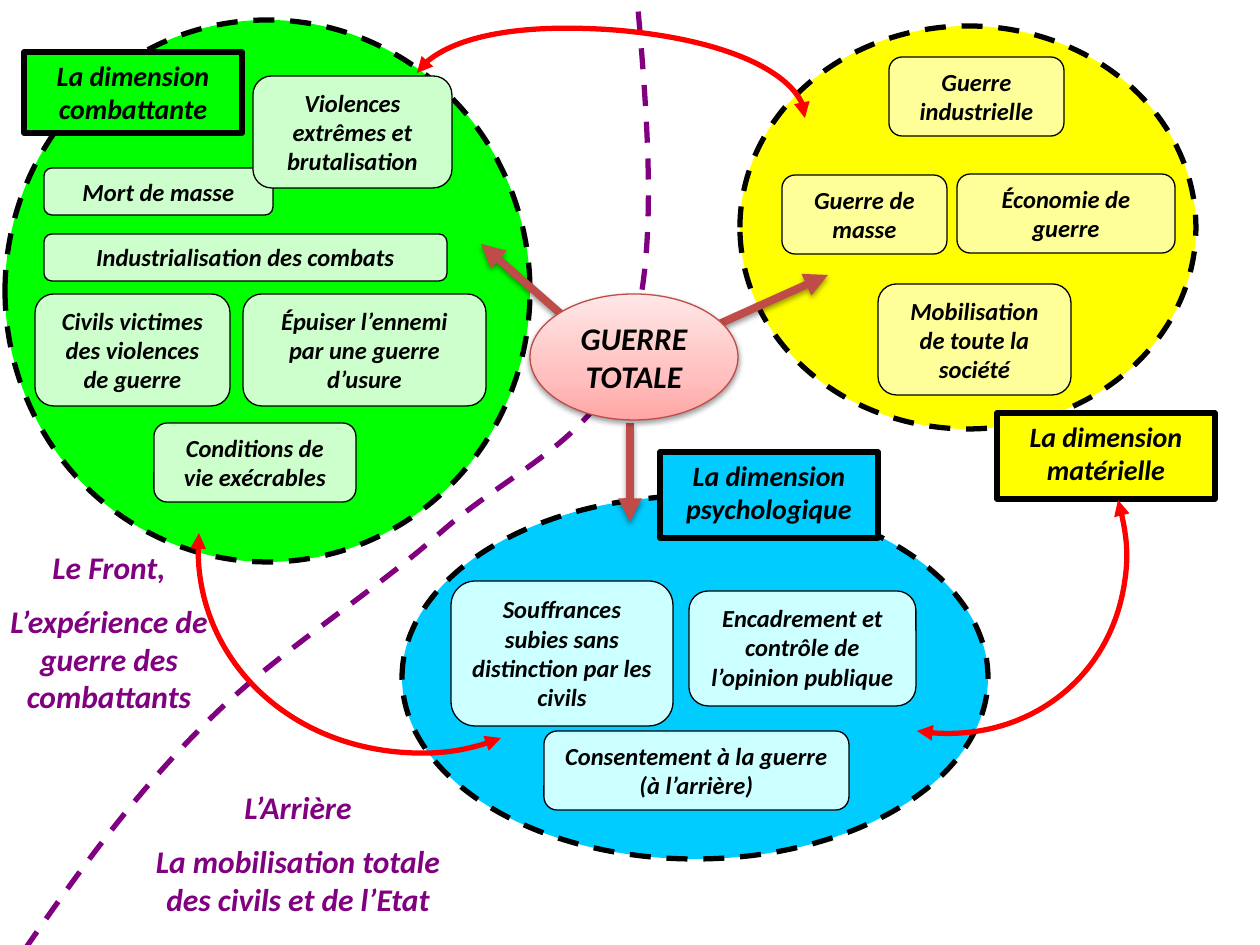
from lxml import etree
from pptx import Presentation
from pptx.dml.color import RGBColor
from pptx.enum.dml import MSO_LINE
from pptx.enum.shapes import MSO_CONNECTOR, MSO_SHAPE
from pptx.enum.text import MSO_ANCHOR, MSO_AUTO_SIZE, PP_ALIGN
from pptx.oxml import parse_xml
from pptx.oxml.ns import nsdecls, qn
from pptx.util import Emu, Pt

EMU_PER_PX = 914400 / 126

BLACK = RGBColor(0x00, 0x00, 0x00)
PURPLE = RGBColor(0x80, 0x00, 0x80)
RED = RGBColor(0xFF, 0x00, 0x00)
BRICK = RGBColor(0xBF, 0x4C, 0x48)
YELLOW = RGBColor(0xFF, 0xFF, 0x00)
PALE_YELLOW = RGBColor(0xFF, 0xFF, 0x99)
BLUE = RGBColor(0x00, 0xCC, 0xFF)
PALE_BLUE = RGBColor(0xCC, 0xFF, 0xFF)
GREEN = RGBColor(0x00, 0xFF, 0x00)
PALE_GREEN = RGBColor(0xCC, 0xFF, 0xCC)
PINK_STOPS = [(0, RGBColor(0xFF, 0xA6, 0xA5)), (35, RGBColor(0xFF, 0xC0, 0xBF)),
              (100, RGBColor(0xFF, 0xE7, 0xE7))]

# Each dimension: bubble box, bubble colour, title, title box, theme colour, themes
DIMENSIONS = [
    ((740, 26, 456, 403), YELLOW, "La dimension matérielle", (997, 413, 218, 86), PALE_YELLOW, [
        ("Guerre de masse", (782, 175, 165, 79)),
        ("Économie de guerre", (957, 174, 218, 79)),
        ("Mobilisation de toute la société", (878, 284, 193, 111)),
        ("Guerre industrielle", (889, 57, 175, 79)),
    ]),
    ((402, 496, 586, 363), BLUE, "La dimension psychologique", (660, 452, 218, 86), PALE_BLUE, [
        ("Encadrement et contrôle de l’opinion publique", (689, 591, 227, 115)),
        ("Consentement à la guerre (à l’arrière)", (544, 731, 305, 79)),
        ("Souffrances subies sans distinction par les civils", (451, 581, 222, 145)),
    ]),
    ((5, 20, 525, 542), GREEN, "La dimension combattante", (24, 52, 218, 81), PALE_GREEN, [
        ("Industrialisation des combats", (44, 234, 403, 47)),
        ("Conditions de vie exécrables", (154, 423, 202, 79)),
        ("Épuiser l’ennemi\npar une guerre d’usure", (243, 294, 243, 112)),
        ("Mort de masse", (44, 168, 229, 47)),
        ("Civils victimes des violences de guerre", (35, 294, 195, 112)),
        ("Violences extrêmes et brutalisation", (253, 76, 199, 112)),
    ]),
]

ZONE_NOTES = [
    ("Le Front,\nL’expérience de guerre des combattants", (-25, 542, 268, 184)),
    ("L’Arrière\nLa mobilisation totale des civils et de l’Etat", (124, 782, 348, 146)),
]

# Curves: a start point, then two control points and an end point per segment
FRONT_LINE = [(25, 949), (79, 871), (134, 795), (203, 726), (271, 656), (369, 596), (440, 533),
              (510, 471), (593, 442), (627, 352), (660, 260), (648, 123), (636, -14)]
LINKS = [
    [(1118, 500), (1126, 528), (1129, 557), (1124, 586), (1108, 682), (1016, 747), (917, 731)],
    [(501, 738), (469, 751), (433, 755), (398, 752), (278, 741), (189, 643), (199, 533)],
    [(417, 73), (437, 40), (520, 23), (615, 30), (723, 39), (808, 79), (805, 118)],
]

CENTRE_ARROWS = [((561, 314), (481, 244)), ((719, 324), (828, 275)), ((630, 423), (630, 522))]


def px(*values):
    return [Emu(round(value * EMU_PER_PX)) for value in values]


def set_line(line, color, width, dashed=False):
    line.color.rgb = color
    line.width = Pt(width)
    if dashed:
        line.dash_style = MSO_LINE.DASH


def add_arrowheads(shape, *ends):
    outline = shape.line._get_or_add_ln()
    for end in ends:
        etree.SubElement(outline, qn("a:" + end), type="triangle")


def add_soft_shadow(shape):
    shape._element.spPr.append(parse_xml(
        f'<a:effectLst {nsdecls("a")}>'
        '<a:outerShdw blurRad="40000" dist="20000" dir="5400000" rotWithShape="0">'
        '<a:srgbClr val="000000"><a:alpha val="38000"/></a:srgbClr>'
        '</a:outerShdw></a:effectLst>'))


def write_text(shape, text, size, color=BLACK, gap=0):
    frame = shape.text_frame
    frame.text = text
    frame.word_wrap = True
    frame.vertical_anchor = MSO_ANCHOR.TOP
    frame.auto_size = MSO_AUTO_SIZE.SHAPE_TO_FIT_TEXT
    for index, paragraph in enumerate(frame.paragraphs):
        paragraph.alignment = PP_ALIGN.CENTER
        if gap and index:
            paragraph.space_before = Pt(gap)
        font = paragraph.font
        font.name, font.size = "Calibri", Pt(size)
        font.bold = font.italic = True
        font.color.rgb = color


def add_box(slide, kind, box, fill, width, dashed=False):
    shape = slide.shapes.add_shape(kind, *px(*box))
    shape.shadow.inherit = False
    shape.fill.solid()
    shape.fill.fore_color.rgb = fill
    set_line(shape.line, BLACK, width, dashed)
    return shape


def add_dimension(slide, bubble, color, title, title_box, theme_color, themes):
    add_box(slide, MSO_SHAPE.OVAL, bubble, color, 3, dashed=True)
    write_text(add_box(slide, MSO_SHAPE.RECTANGLE, title_box, color, 3), title, 16)
    for text, box in themes:
        write_text(add_box(slide, MSO_SHAPE.ROUNDED_RECTANGLE, box, theme_color, 0.75), text, 14)


def add_curve(slide, points, color, dashed=False):
    builder = slide.shapes.build_freeform(*points[0], scale=EMU_PER_PX)
    builder.add_line_segments(points[1:], close=False)
    shape = builder.convert_to_shape()
    # Merge every three straight steps into one Bézier segment
    steps = shape._element.xpath(".//a:lnTo")
    for first, second, third in zip(steps[::3], steps[1::3], steps[2::3]):
        first.tag = qn("a:cubicBezTo")
        for step in (second, third):
            first.append(step[0])
            step.getparent().remove(step)
    shape.shadow.inherit = False
    shape.fill.background()
    set_line(shape.line, color, 3, dashed)
    return shape


def add_centre_arrow(slide, start, end):
    arrow = slide.shapes.add_connector(MSO_CONNECTOR.STRAIGHT, *px(*start, *end))
    set_line(arrow.line, BRICK, 4.5)
    add_arrowheads(arrow, "tailEnd")
    add_soft_shadow(arrow)


def add_centre(slide):
    shape = slide.shapes.add_shape(MSO_SHAPE.OVAL, *px(530, 294, 208, 126))
    shape.fill.gradient()
    shape.fill.gradient_angle = 90
    stops = shape._element.spPr.find(qn("a:gradFill")).find(qn("a:gsLst"))
    for stop in list(stops):
        stops.remove(stop)
    for position, color in PINK_STOPS:
        stop = etree.SubElement(stops, qn("a:gs"), pos=str(position * 1000))
        etree.SubElement(stop, qn("a:srgbClr"), val=str(color))
    set_line(shape.line, BRICK, 0.75)
    add_soft_shadow(shape)
    write_text(shape, "GUERRE\nTOTALE", 18)
    shape.text_frame.word_wrap = False
    shape.text_frame.auto_size = MSO_AUTO_SIZE.NONE
    shape.text_frame.vertical_anchor = MSO_ANCHOR.MIDDLE


def main():
    presentation = Presentation()
    presentation.slide_width, presentation.slide_height = px(1260, 945)
    slide = presentation.slides.add_slide(presentation.slide_layouts[6])

    # Boundary between front and rear, then the three dimensions
    add_curve(slide, FRONT_LINE, PURPLE, dashed=True)
    for dimension in DIMENSIONS:
        add_dimension(slide, *dimension)
    for text, box in ZONE_NOTES:
        write_text(slide.shapes.add_textbox(*px(*box)), text, 18, PURPLE, gap=9)

    # Links between dimensions
    for points in LINKS:
        add_arrowheads(add_curve(slide, points, RED), "headEnd", "tailEnd")

    # Central idea and its arrows
    for start, end in CENTRE_ARROWS:
        add_centre_arrow(slide, start, end)
    add_centre(slide)

    presentation.save("out.pptx")


if __name__ == "__main__":
    main()
